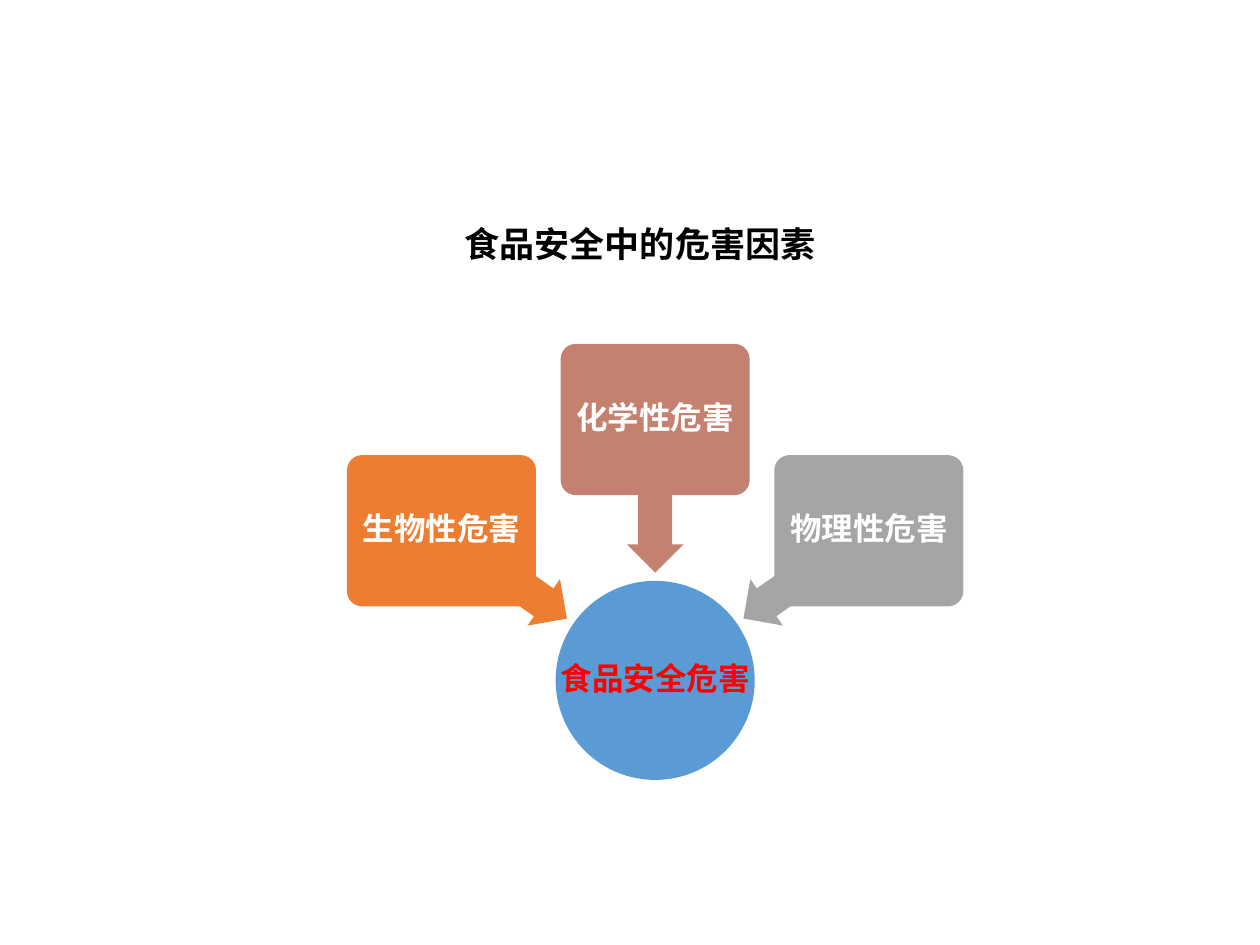
import math
from dataclasses import dataclass

import pptx
import pptx.dml.color
import pptx.enum.shapes
import pptx.enum.text
import pptx.util
from pptx.util import Inches

Kind = pptx.enum.shapes.MSO_SHAPE
Align = pptx.enum.text.PP_ALIGN
Anchor = pptx.enum.text.MSO_ANCHOR


@dataclass(frozen=True)
class Theme:
    hub: str = "5B9BD5"
    alert: str = "FF0000"
    white: str = "FFFFFF"
    black: str = "000000"
    head_font: str = "Arial"
    body_font: str = "Calibri"
    head_size: int = 20
    body_size: int = 18


@dataclass(frozen=True)
class Hazard:
    label: str
    turn: int  # degrees clockwise from the right of the hub
    fill: str


THEME = Theme()
HUB_X, HUB_Y, HUB_SIZE = 5.2, 5.4, 1.58
ARROW_REACH, CARD_REACH = 1.46, 2.07
HAZARDS = [
    Hazard("生物性危害", 215, "ED7D31"),
    Hazard("化学性危害", 270, "C48170"),
    Hazard("物理性危害", 325, "A5A5A5"),
]


def color(code: str) -> pptx.dml.color.RGBColor:
    return pptx.dml.color.RGBColor.from_string(code)


def write(frame, text: str, font: str, size: int, ink: str, inset: float):
    """Put one bold, centred line in a text frame."""
    frame.margin_left = frame.margin_right = Inches(inset)
    frame.margin_top = frame.margin_bottom = Inches(inset)
    frame.vertical_anchor = Anchor.MIDDLE
    para = frame.paragraphs[0]
    para.text = text
    para.alignment = Align.CENTER
    para.font.name = font
    para.font.size = pptx.util.Pt(size)
    para.font.bold = True
    para.font.color.rgb = color(ink)
    return para


def add_part(shapes, kind, x: float, y: float, wide: float, high: float, fill: str):
    """Add a plain filled shape centred on x, y."""
    part = shapes.add_shape(kind, Inches(x - wide / 2), Inches(y - high / 2),
                            Inches(wide), Inches(high))
    part.shadow.inherit = False
    part.fill.solid()
    part.fill.fore_color.rgb = color(fill)
    part.line.fill.background()
    return part


def add_label(part, text: str, ink: str, inset: float) -> None:
    para = write(part.text_frame, text, THEME.body_font, THEME.body_size, ink, inset)
    para.line_spacing = 0.9


def add_hazard(shapes, item: Hazard) -> None:
    """Add a card on the ring and its arrow towards the hub."""
    angle = math.radians(item.turn)
    across, down = math.cos(angle), math.sin(angle)
    arrow = add_part(shapes, Kind.LEFT_ARROW, HUB_X + ARROW_REACH * across,
                     HUB_Y + ARROW_REACH * down, 1.21, 0.45, item.fill)
    arrow.adjustments[0], arrow.adjustments[1] = 0.6, 0.5
    arrow.rotation = item.turn
    card = add_part(shapes, Kind.ROUNDED_RECTANGLE, HUB_X + CARD_REACH * across,
                    HUB_Y + CARD_REACH * down, 1.5, 1.2, item.fill)
    card.adjustments[0] = 0.1
    add_label(card, item.label, THEME.white, 0.04)


def main() -> None:
    deck = pptx.Presentation()
    deck.slide_width, deck.slide_height = Inches(10), Inches(7.5)
    slide = deck.slides.add_slide(deck.slide_layouts[5])

    # Title
    title = slide.shapes.title
    title.left, title.top = Inches(0.99), Inches(1.71)
    title.width, title.height = Inches(8.18), Inches(0.44)
    write(title.text_frame, "食品安全中的危害因素", THEME.head_font,
          THEME.head_size, THEME.black, 0.05)

    # Hub
    ring = slide.shapes.add_group_shape().shapes
    hub = add_part(ring, Kind.OVAL, HUB_X, HUB_Y, HUB_SIZE, HUB_SIZE, THEME.hub)
    add_label(hub, "食品安全危害", THEME.alert, 0.01)
    hub.text_frame.word_wrap = False

    # Hazards around the hub
    for item in HAZARDS:
        add_hazard(ring, item)

    deck.save("out.pptx")


if __name__ == "__main__":
    main()
